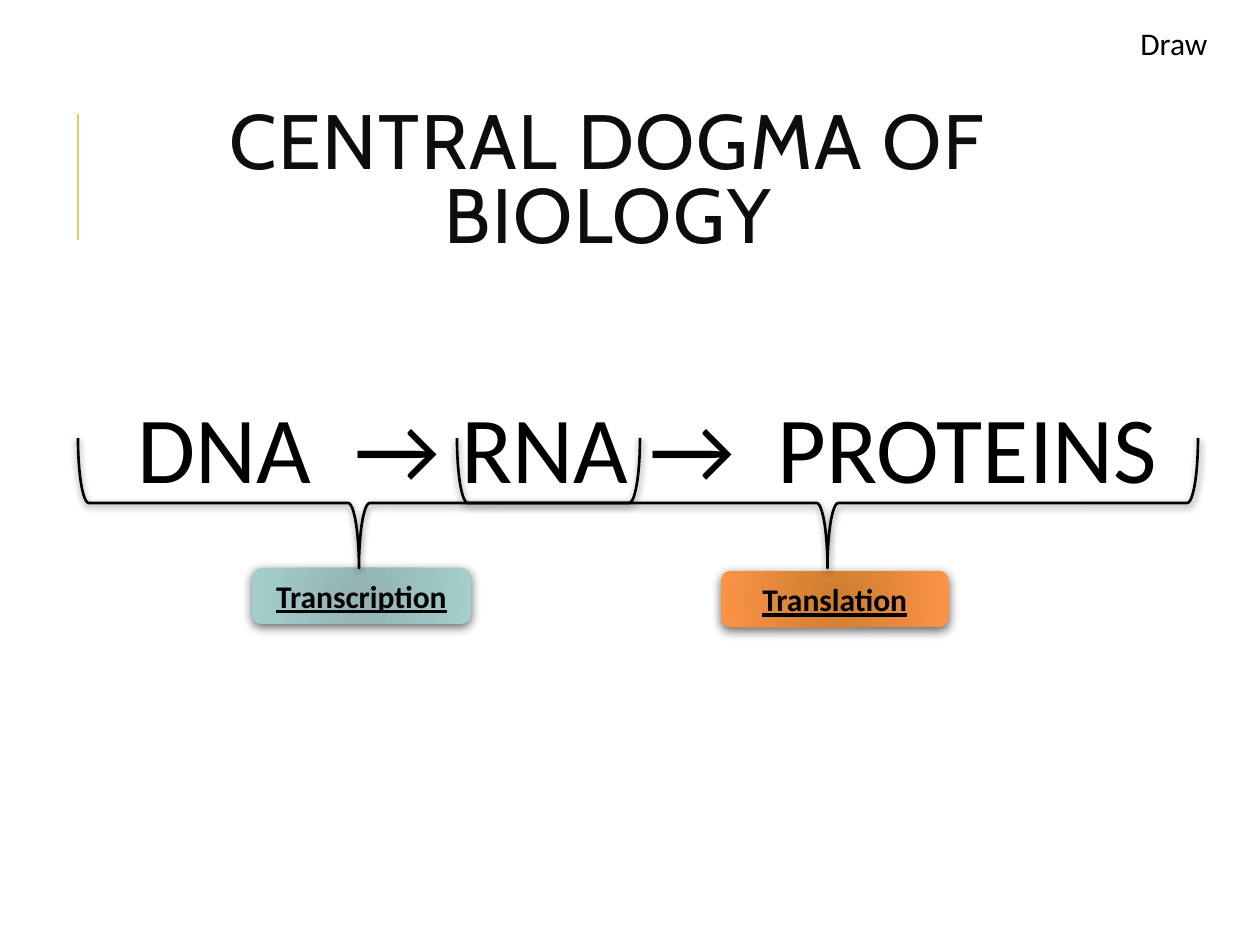
"""Build the central dogma of biology slide."""
import dataclasses
import typing

import lxml.etree
import pptx
import pptx.dml.color
import pptx.enum.shapes
import pptx.enum.text
import pptx.oxml.ns
import pptx.util

SCALE = 914400 / 126
BLACK = pptx.dml.color.RGBColor(0x00, 0x00, 0x00)
INK = pptx.dml.color.RGBColor(0x0D, 0x0D, 0x0D)
GOLD = pptx.dml.color.RGBColor(0xE3, 0xCC, 0x5A)
TEAL = pptx.dml.color.RGBColor(0xA3, 0xCE, 0xCC)
DARK_TEAL = pptx.dml.color.RGBColor(0x92, 0xB2, 0xB1)
ORANGE = pptx.dml.color.RGBColor(0xFD, 0x93, 0x47)
DARK_ORANGE = pptx.dml.color.RGBColor(0xCC, 0x7D, 0x2E)
ALIGN = pptx.enum.text.PP_ALIGN
ANCHOR = pptx.enum.text.MSO_ANCHOR
SHAPE = pptx.enum.shapes.MSO_SHAPE
FIT = pptx.enum.text.MSO_AUTO_SIZE.SHAPE_TO_FIT_TEXT
WIDE_GAP = 12.2


@dataclasses.dataclass
class Step:
    name: str
    left: int
    top: int
    width: int
    inner: pptx.dml.color.RGBColor
    outer: pptx.dml.color.RGBColor
    start: int
    end: int


STEPS = [
    Step("Translation", 721, 571, 228, DARK_ORANGE, ORANGE, 457, 1198),
    Step("Transcription", 252, 568, 219, DARK_TEAL, TEAL, 78, 640),
]
BOX_HEIGHT = 56
BRACE_TOP, BRACE_DEPTH = 438, 130


def px(size: float) -> pptx.util.Emu:
    return pptx.util.Emu(round(size * SCALE))


def add_tag(parent: typing.Any, tag: str, **attrs: typing.Any) -> typing.Any:
    values = {key: str(value) for key, value in attrs.items()}
    return lxml.etree.SubElement(parent, pptx.oxml.ns.qn(tag), values)


def write(shape: typing.Any, *parts: tuple[str, float], size: int,
          font: str = "Calibri", color: pptx.dml.color.RGBColor = BLACK,
          strong: bool = False, align: typing.Any = ALIGN.CENTER,
          anchor: typing.Any = ANCHOR.TOP, wrap: bool = True,
          fit: typing.Any = None, line: float | None = None) -> None:
    frame = shape.text_frame
    frame.word_wrap = wrap
    frame.vertical_anchor = anchor
    if fit is not None:
        frame.auto_size = fit
    para = frame.paragraphs[0]
    para.alignment = align
    if line:
        para.line_spacing = line
    for text, track in parts:
        run = para.add_run()
        run.text = text
        run.font.size = pptx.util.Pt(size)
        run.font.name = font
        run.font.color.rgb = color
        if strong:
            run.font.bold = run.font.underline = True
        if track:
            run.font._element.set("spc", str(round(track * 100)))


def cast(shape: typing.Any, alpha: int, blur: int, drop: int) -> None:
    shape.shadow.inherit = False
    effects = shape._element.spPr.find(pptx.oxml.ns.qn("a:effectLst"))
    shade = add_tag(effects, "a:outerShdw", blurRad=pptx.util.Pt(blur),
                    dist=pptx.util.Pt(drop), dir=90 * 60000, rotWithShape=0)
    add_tag(add_tag(shade, "a:srgbClr", val=BLACK), "a:alpha", val=alpha * 1000)


def draw_box(shapes: typing.Any, step: Step) -> None:
    box = shapes.add_shape(SHAPE.ROUNDED_RECTANGLE, px(step.left), px(step.top),
                           px(step.width), px(BOX_HEIGHT))
    box.fill.gradient()
    for stop, color in zip(box.fill.gradient_stops, (step.inner, step.outer)):
        stop.color.rgb = color
    grad = box._element.spPr.find(pptx.oxml.ns.qn("a:gradFill"))
    grad.remove(grad.find(pptx.oxml.ns.qn("a:lin")))
    round_path = add_tag(grad, "a:path", path="circle")
    add_tag(round_path, "a:fillToRect", l=100000, t=100000, r=100000, b=100000)
    box.line.fill.background()
    cast(box, 60, 6, 2)
    write(box, (step.name, 0), size=18, strong=True, anchor=ANCHOR.MIDDLE)


def draw_brace(shapes: typing.Any, step: Step) -> None:
    span = step.end - step.start
    left = (step.start + step.end - BRACE_DEPTH) / 2
    top = BRACE_TOP + (BRACE_DEPTH - span) / 2
    brace = shapes.add_shape(SHAPE.LEFT_BRACE, px(left), px(top),
                             px(BRACE_DEPTH), px(span))
    brace.rotation = 270
    brace.fill.background()
    brace.line.color.rgb = BLACK
    brace.line.width = pptx.util.Pt(1.5)
    cast(brace, 50, 4, 1)


def draw_rule(shapes: typing.Any) -> None:
    rule = shapes.add_connector(pptx.enum.shapes.MSO_CONNECTOR.STRAIGHT,
                                px(78), px(240), px(78), px(114))
    rule.line.color.rgb = GOLD
    rule.line.width = pptx.util.Pt(1.5)
    add_tag(rule._element.spPr, "a:effectLst")


def main() -> None:
    deck = pptx.Presentation()
    deck.slide_width, deck.slide_height = px(1260), px(945)
    shapes = deck.slides.add_slide(deck.slide_layouts[6]).shapes
    draw_rule(shapes)
    title = shapes.add_textbox(px(106), px(81), px(1004), px(207))
    write(title, ("CENTRAL DOGMA OF BIOLOGY", 1), size=44, font="Cabin",
          color=INK, anchor=ANCHOR.MIDDLE, line=0.8)
    chain = shapes.add_textbox(px(97), px(383), px(1101), px(127))
    write(chain, ("DNA", 0), (" ", WIDE_GAP), ("→ RNA →", 0),
          (" ", WIDE_GAP), ("PROTEINS", 0), size=54, wrap=False, fit=FIT)
    for step in STEPS:
        draw_box(shapes, step)
    for step in reversed(STEPS):
        draw_brace(shapes, step)
    note = shapes.add_textbox(px(1128), px(18), px(120), px(50))
    write(note, ("Draw", 0), size=18, align=ALIGN.LEFT, fit=FIT)
    deck.save("out.pptx")


if __name__ == "__main__":
    main()
